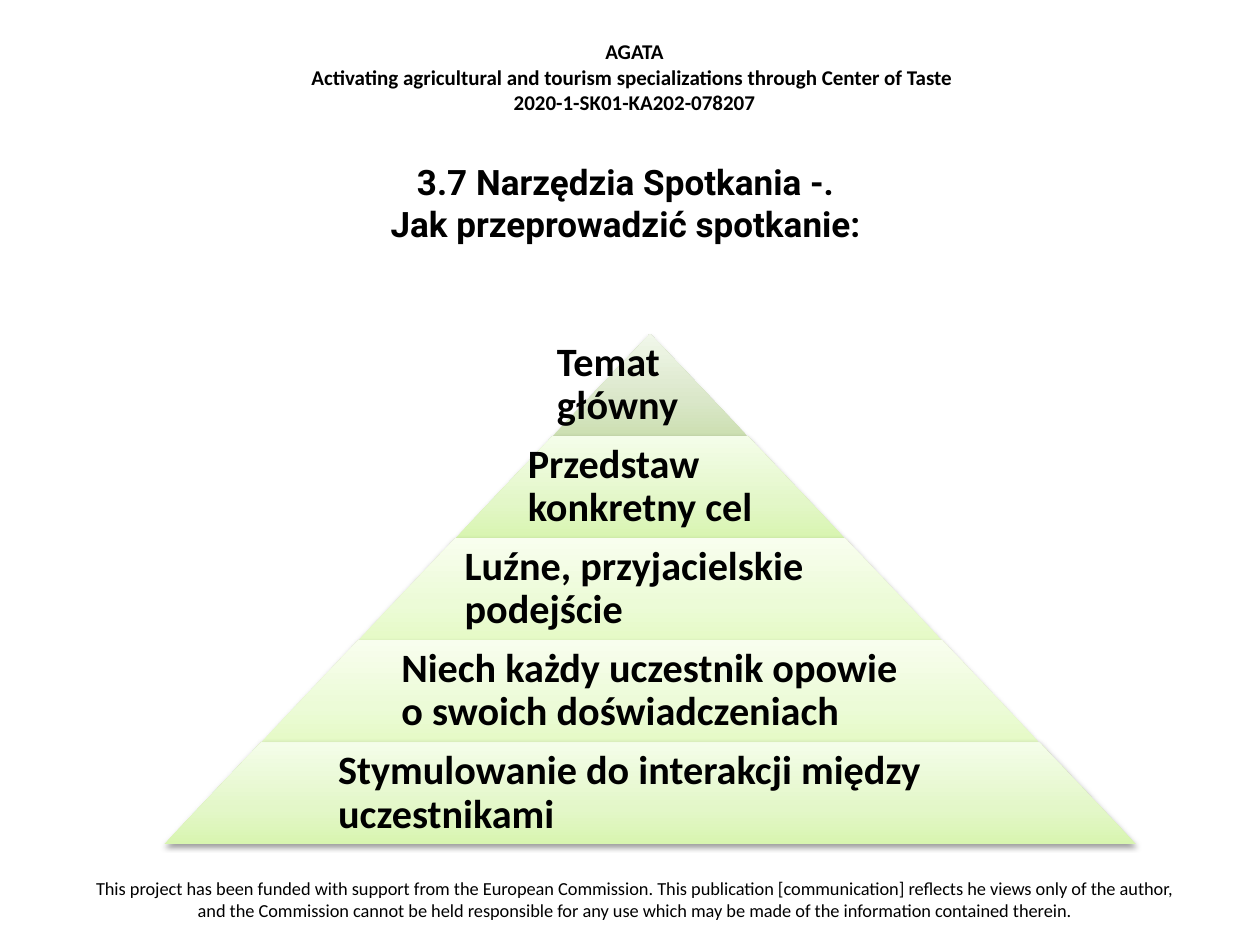
from lxml import etree
from pptx import Presentation
from pptx.dml.color import RGBColor
from pptx.enum import shapes, text
from pptx.oxml import ns
from pptx.util import Pt

BLACK = RGBColor(0, 0, 0)
SAGE = ("CCDFB1", "DAE7C9", "F1F7EA")
LIME = ("D8F5B0", "E3F7C8", "F4FDE9")
PALE = ("E5FAC6", "ECFBD7", "F8FEEE")

PROJECT = [
    "AGATA",
    "Activating agricultural and tourism specializations through Center of Taste ",
    "2020-1-SK01-KA202-078207",
]
FUNDING = [
    "This project has been funded with support from the European Commission. "
    "This publication [communication] reflects he views only of the author, "
    "and the Commission cannot be held responsible for any use which may be made "
    "of the information contained therein."
]
TITLE = "3.7 Narzędzia Spotkania -. \vJak przeprowadzić spotkanie: "
LEVELS = [
    ("Temat główny", SAGE, 1),
    ("Przedstaw konkretny cel", LIME, 0.65),
    ("Luźne, przyjacielskie podejście", PALE, 0.65),
    ("Niech każdy uczestnik opowie o swoich doświadczeniach", PALE, 0.65),
    ("Stymulowanie do interakcji między uczestnikami", LIME, 0.65),
]
STOPS = (0, 35000, 100000)
CENTER, TOP, LEVEL_HEIGHT, SLOPE = 371.5, 190.8, 58.35, 0.952


def style_text(frame, size, font="Calibri", bold=True, align=text.PP_ALIGN.CENTER):
    frame.word_wrap = True
    for paragraph in frame.paragraphs:
        paragraph.alignment = align
        for run in paragraph.runs:
            run.font.size = Pt(size)
            run.font.name = font
            run.font.bold = bold
            run.font.color.rgb = BLACK


def add_text(parent, lines, left, top, width, height, size, **style):
    box = parent.add_textbox(Pt(left), Pt(top), Pt(width), Pt(height))
    box.text_frame.text = "\n".join(lines)
    style_text(box.text_frame, size, **style)
    return box.text_frame


def add_gradient_and_shadow(shape, colors):
    stops = "".join(
        f'<a:gs pos="{position}"><a:srgbClr val="{color}"/></a:gs>'
        for position, color in zip(STOPS, colors)
    )
    namespace = ns.nsdecls("a")
    gradient = etree.fromstring(
        f'<a:gradFill {namespace} rotWithShape="1"><a:gsLst>{stops}</a:gsLst>'
        '<a:lin ang="16200000" scaled="0"/></a:gradFill>'
    )
    effects = etree.fromstring(
        f'<a:effectLst {namespace}><a:outerShdw blurRad="40000" dist="20000" '
        'dir="5400000" rotWithShape="0"><a:srgbClr val="000000">'
        '<a:alpha val="38000"/></a:srgbClr></a:outerShdw></a:effectLst>'
    )
    shape.line.fill.background()
    properties = shape._element.spPr
    properties.find(ns.qn("a:prstGeom")).addnext(gradient)
    properties.find(ns.qn("a:ln")).addnext(effects)


def add_level(group, index, label, colors, text_share):
    width = 2 * SLOPE * LEVEL_HEIGHT * (index + 1)
    top = TOP + index * LEVEL_HEIGHT
    trapezoid = group.shapes.add_shape(
        shapes.MSO_SHAPE.TRAPEZOID,
        Pt(CENTER - width / 2), Pt(top), Pt(width), Pt(LEVEL_HEIGHT),
    )
    trapezoid.adjustments[0] = SLOPE
    add_gradient_and_shadow(trapezoid, colors)

    text_width = width * text_share
    frame = add_text(
        group.shapes, [label], CENTER - text_width / 2, top, text_width,
        LEVEL_HEIGHT, 23, align=text.PP_ALIGN.LEFT,
    )
    frame.vertical_anchor = text.MSO_ANCHOR.MIDDLE
    frame.margin_left = frame.margin_right = Pt(2.3)
    frame.margin_top = frame.margin_bottom = Pt(2.3)
    frame.paragraphs[0].line_spacing = 0.9


def main():
    presentation = Presentation()
    presentation.slide_width, presentation.slide_height = Pt(720), Pt(540)
    slide = presentation.slides.add_slide(presentation.slide_layouts[5])

    title = slide.shapes.title
    title.left, title.top, title.width, title.height = Pt(36), Pt(80.6), Pt(648), Pt(70.6)
    title.text_frame.text = TITLE
    title.text_frame.vertical_anchor = text.MSO_ANCHOR.MIDDLE
    style_text(title.text_frame, 20, font="Roboto")

    add_text(slide.shapes, PROJECT, 149.8, 18.7, 425.5, 51, 12)
    add_text(slide.shapes, FUNDING, 38.9, 497.5, 648, 33.8, 10.5, bold=False)

    pyramid = slide.shapes.add_group_shape()
    for index, level in enumerate(LEVELS):
        add_level(pyramid, index, *level)

    presentation.save("out.pptx")


if __name__ == "__main__":
    main()
